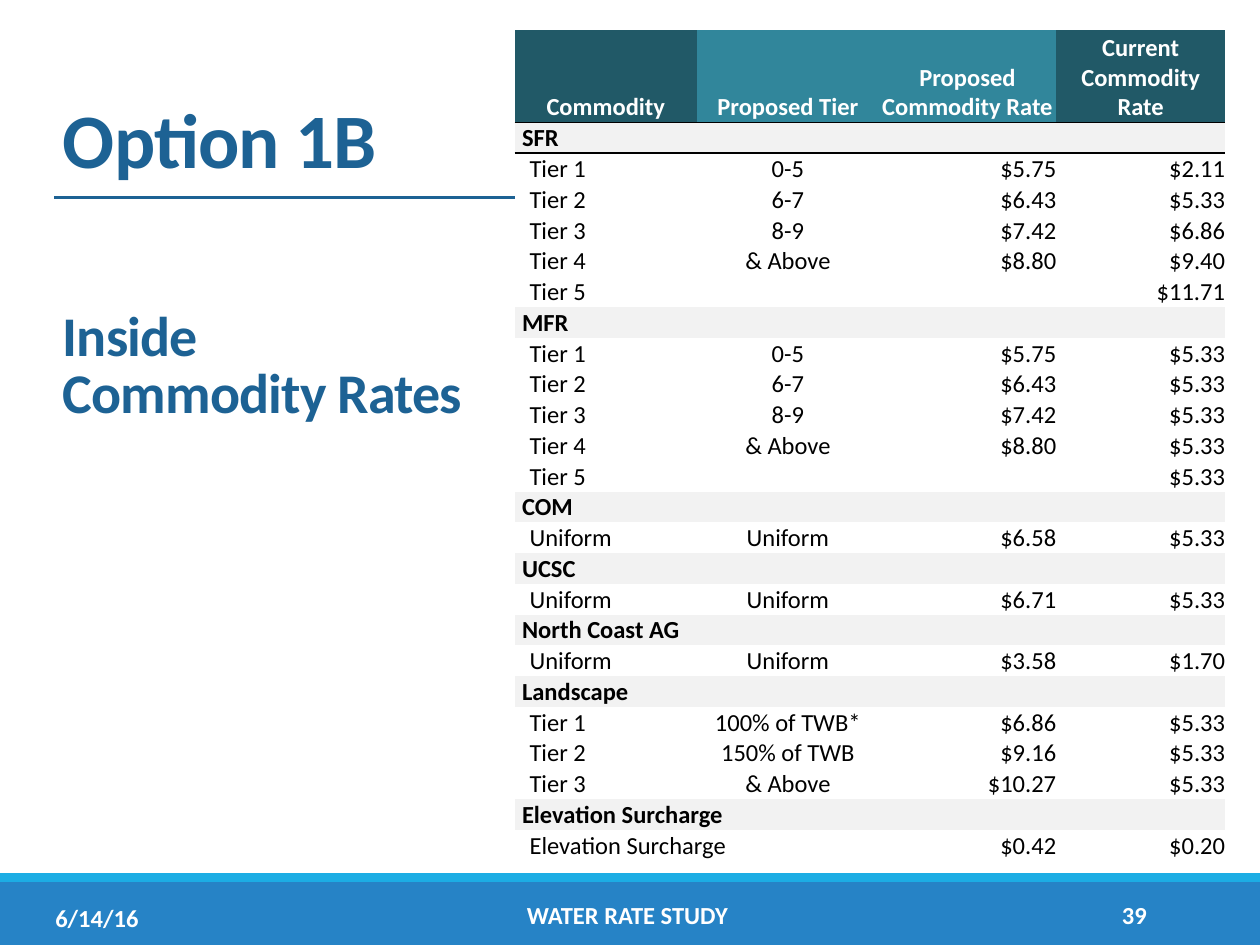
from lxml.etree import SubElement
from pptx import Presentation
from pptx.dml.color import RGBColor
from pptx.enum.shapes import MSO_CONNECTOR as Connector, MSO_SHAPE as Shape
from pptx.enum.text import MSO_ANCHOR as Anchor, PP_ALIGN as Align
from pptx.oxml import parse_xml
from pptx.oxml.ns import nsdecls, qn
from pptx.util import Pt

COLORS = {
    "title": "1D6294", "footer": "2683C6", "stripe": "1CADE4",
    "white": "FFFFFF", "black": "000000", "group": "F2F2F2",
    "dark_head": "215967", "light_head": "31869B",
}
FONT = "Calibri"
NO_TABLE_STYLE = "{2D5ABB26-0587-4C30-8999-92F81FD0307C}"
COLUMN_WIDTHS = [104.4, 103.7, 101.5, 96.5]
HEAD_HEIGHT, ROW_HEIGHT = 52.7, 17.6
HEADINGS = [
    ("Commodity", "dark_head"),
    ("Proposed Tier", "light_head"),
    ("Proposed\nCommodity Rate", "light_head"),
    ("Current Commodity Rate", "dark_head"),
]
TIERS = [("Tier 1", "0-5", "$5.75"), ("Tier 2", "6-7", "$6.43"),
         ("Tier 3", "8-9", "$7.42"), ("Tier 4", "& Above", "$8.80"),
         ("Tier 5", "", "")]
SFR_CURRENT = ["$2.11", "$5.33", "$6.86", "$9.40", "$11.71"]
BASE_RATE = "$5.33"
RATE_GROUPS = {
    "SFR": [(*tier, rate) for tier, rate in zip(TIERS, SFR_CURRENT)],
    "MFR": [(*tier, BASE_RATE) for tier in TIERS],
    "COM": [("Uniform", "Uniform", "$6.58", BASE_RATE)],
    "UCSC": [("Uniform", "Uniform", "$6.71", BASE_RATE)],
    "North Coast AG": [("Uniform", "Uniform", "$3.58", "$1.70")],
    "Landscape": [("Tier 1", "100% of TWB*", "$6.86", BASE_RATE),
                  ("Tier 2", "150% of TWB", "$9.16", BASE_RATE),
                  ("Tier 3", "& Above", "$10.27", BASE_RATE)],
    "Elevation Surcharge": [("Elevation Surcharge", "", "$0.42", "$0.20")],
}


def rgb(name):
    return RGBColor.from_string(COLORS[name])


def style_runs(paragraph, size, color, bold=True):
    for run in paragraph.runs:
        run.font.name = FONT
        run.font.size = Pt(size)
        run.font.bold = bold
        run.font.color.rgb = rgb(color)


def add_band(slide, top, height, color):
    band = slide.shapes.add_shape(Shape.RECTANGLE, 0, Pt(top), Pt(720), Pt(height))
    band.shadow.inherit = False
    band.fill.solid()
    band.fill.fore_color.rgb = rgb(color)
    band.line.fill.background()


def add_rule(slide, left, right, y):
    rule = slide.shapes.add_connector(Connector.STRAIGHT, Pt(left), Pt(y), Pt(right), Pt(y))
    rule.line.color.rgb = rgb("title")
    rule.line.width = Pt(1.5)
    SubElement(rule._element.spPr, qn("a:effectLst"))


def add_text_frame(slide, left, top, width, height, anchor):
    frame = slide.shapes.add_textbox(Pt(left), Pt(top), Pt(width), Pt(height)).text_frame
    frame.word_wrap = True
    frame.vertical_anchor = anchor
    return frame


def add_title(slide):
    frame = add_text_frame(slide, 28.8, 47.5, 246.2, 198.7, Anchor.BOTTOM)
    frame.margin_right = Pt(8.5)
    frame.text = "Option 1B\nInside Commodity Rates"
    for paragraph, size in zip(frame.paragraphs, (44, 32)):
        paragraph.line_spacing = 0.85
        style_runs(paragraph, size, "title")
        for run in paragraph.runs:
            run.font._element.set("spc", "-50")
    frame.paragraphs[1].space_before = Pt(72)


def add_footer(slide, text, left, top, width, align):
    frame = add_text_frame(slide, left, top, width, 28.8, Anchor.MIDDLE)
    frame.text = text
    frame.paragraphs[0].alignment = align
    style_runs(frame.paragraphs[0], 14, "white")


def fill_cell(cell, text, fill, color="black", bold=False, align=Align.LEFT, indent=0):
    cell.margin_left = Pt(indent)
    cell.margin_top = cell.margin_right = cell.margin_bottom = 0
    cell.vertical_anchor = Anchor.BOTTOM
    cell.fill.solid()
    cell.fill.fore_color.rgb = rgb(fill)
    cell.text_frame.text = text
    for paragraph in cell.text_frame.paragraphs:
        paragraph.alignment = align
        style_runs(paragraph, 14, color, bold)
        if not text:
            paragraph._p.get_or_add_endParaRPr().set("sz", "1400")


def add_border(cell, side):
    border = parse_xml(
        f'<a:{side} {nsdecls("a")} w="12700"><a:solidFill>'
        f'<a:srgbClr val="{COLORS["black"]}"/></a:solidFill></a:{side}>')
    cell._tc.get_or_add_tcPr().insert(0, border)


def add_rate_table(slide):
    row_count = 1 + sum(1 + len(rates) for rates in RATE_GROUPS.values())
    frame = slide.shapes.add_table(
        row_count, len(HEADINGS), Pt(294), Pt(17.3), Pt(sum(COLUMN_WIDTHS)),
        Pt(HEAD_HEIGHT + ROW_HEIGHT * (row_count - 1)))
    table = frame.table
    table.first_row = table.horz_banding = False
    table._tbl.tblPr.find(qn("a:tableStyleId")).text = NO_TABLE_STYLE
    for column, width in zip(table.columns, COLUMN_WIDTHS):
        column.width = Pt(width)
    for index, row in enumerate(table.rows):
        row.height = Pt(ROW_HEIGHT if index else HEAD_HEIGHT)

    for column, (heading, fill) in enumerate(HEADINGS):
        fill_cell(table.cell(0, column), heading, fill, "white", True, Align.CENTER)
        add_border(table.cell(0, column), "lnB")
        add_border(table.cell(1, column), "lnT")

    aligns = [Align.LEFT, Align.CENTER, Align.RIGHT, Align.RIGHT]
    row = 1
    for group, rates in RATE_GROUPS.items():
        for column in range(len(HEADINGS)):
            fill_cell(table.cell(row, column), "" if column else group, "group",
                      bold=True, indent=0 if column else 4.3)
        for offset, values in enumerate(rates, 1):
            for column, (value, align) in enumerate(zip(values, aligns)):
                fill_cell(table.cell(row + offset, column), value, "white",
                          align=align, indent=0 if column else 8.6)
        row += 1 + len(rates)
    for surcharge_row in (row_count - 2, row_count - 1):
        table.cell(surcharge_row, 0).merge(table.cell(surcharge_row, 1))


def main():
    deck = Presentation()
    deck.slide_width, deck.slide_height = Pt(720), Pt(540)
    slide = deck.slides.add_slide(deck.slide_layouts[6])
    add_band(slide, 504, 36, "footer")
    add_band(slide, 499, 5, "stripe")
    add_rule(slide, 31, 688.3, 113)
    add_title(slide)
    add_footer(slide, "WATER RATE STUDY", 104.4, 508.3, 508.3, Align.CENTER)
    add_footer(slide, "39", 612.7, 508.3, 49.7, Align.RIGHT)
    add_footer(slide, "6/14/16", 24.5, 509.8, 79.9, Align.LEFT)
    add_rate_table(slide)
    deck.save("out.pptx")


if __name__ == "__main__":
    main()
